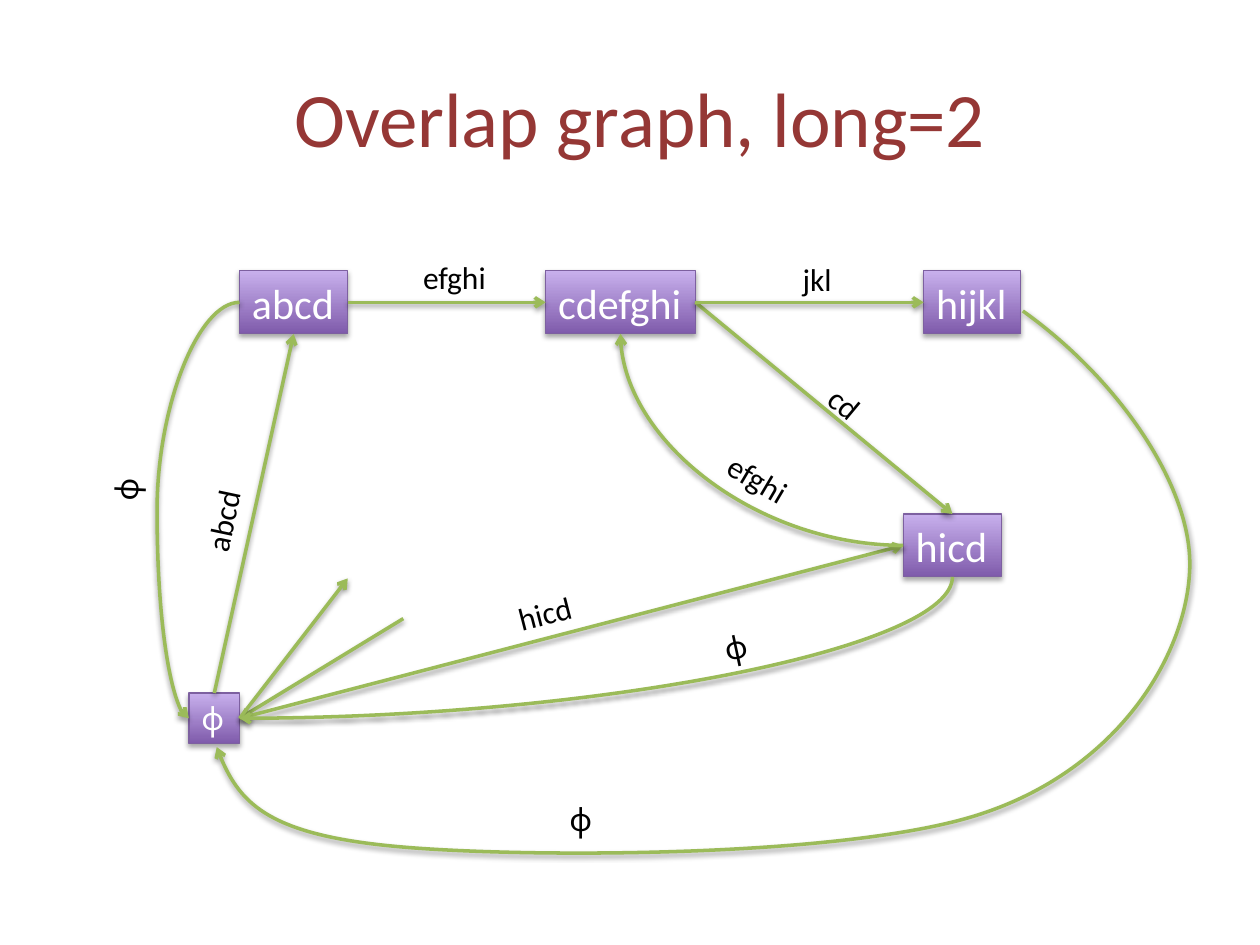
from lxml import etree
from pptx import Presentation
from pptx import util as u
from pptx.dml import color
from pptx.enum import shapes, text
from pptx.oxml import ns

COLOURS = {
    "title": "953735",
    "node_top": "C8B0ED",
    "node_bottom": "7F5BAB",
    "node_line": "7D60A0",
    "node_text": "FFFFFF",
    "edge": "9BBB59",
    "label": "000000",
    "shadow": "000000",
}
TOP, LEFT, BOTTOM, RIGHT = range(4)
PHI = "ϕ"

# name: left, top, width, height in cm within the graph
NODES = {
    "abcd": (2.83, 0.46, 2.18, 1.27),
    "cdefghi": (9, 0.46, 3.02, 1.27),
    "hijkl": (16.62, 0.46, 1.96, 1.27),
    "hicd": (16.21, 5.36, 1.98, 1.27),
    PHI: (1.81, 8.97, 1.02, 1.02),
}
# an end is a node with its side, or a free point in cm
STRAIGHT_EDGES = [
    (("abcd", RIGHT), ("cdefghi", LEFT)),
    (("cdefghi", RIGHT), ("hicd", TOP)),
    (("cdefghi", RIGHT), ("hijkl", LEFT)),
    ((PHI, TOP), ("abcd", BOTTOM)),
    ((6.13, 7.47), (PHI, RIGHT)),
    ((PHI, RIGHT), ("hicd", LEFT)),
    ((PHI, RIGHT), (5.01, 6.66)),
]
CURVED_EDGES = [
    (("hicd", LEFT), ("cdefghi", BOTTOM), {"preset": "curvedConnector2"}),
    (("abcd", LEFT), (PHI, LEFT), {"preset": "curvedConnector3", "bend": 163000}),
    (("hicd", BOTTOM), (PHI, RIGHT), {"preset": "curvedConnector2", "upright": True}),
]
# start point, then three Bezier points for each segment
LOOP = [
    (18.62, 1.27),
    (20.56, 2.65), (22.1, 4.88), (21.98, 6.56),
    (21.88, 8.26), (20.53, 10.47), (17.86, 11.38),
    (15.22, 12.3), (8.62, 12.3), (6.05, 12.07),
    (3.46, 11.84), (2.75, 11.13), (2.37, 10.06),
]
# wording, left, top, width in cm, rotation in degrees
LABELS = [
    ("abcd", 1.61, 4.98, 1.75, 281.9),
    ("efghi", 6.28, 0.08, 1.78, 0),
    ("jkl", 13.93, 0.11, 1.12, 0),
    ("cd", 14.48, 2.62, 1.12, 39.8),
    ("efghi", 12.4, 4.14, 1.78, 30.7),
    (PHI, 9.23, 11, 1.02, 0),
    (PHI, 0.03, 4.32, 1.02, 272.6),
    ("hicd", 8.19, 6.84, 1.6, 345.6),
    (PHI, 12.35, 7.52, 1.02, 347.8),
]


def rgb(name):
    return color.RGBColor.from_string(COLOURS[name])


def add_child(parent, tag, **attributes):
    return etree.SubElement(parent, ns.qn(tag), attributes)


def write(shape, wording, size, colour, font="Calibri", align=text.PP_ALIGN.LEFT, wrap=False):
    frame = shape.text_frame
    frame.word_wrap = wrap
    frame.vertical_anchor = text.MSO_ANCHOR.MIDDLE
    paragraph = frame.paragraphs[0]
    paragraph.alignment = align
    run = paragraph.add_run()
    run.text = wording
    run.font.size = u.Pt(size)
    run.font.name = font
    run.font.color.rgb = rgb(colour)


def font_for(wording):
    return "Open Sans" if wording == PHI else "Calibri"


def add_shadow(shape, opacity, distance):
    properties = shape._element.spPr
    effects = properties.find(ns.qn("a:effectLst"))
    if effects is None:
        effects = add_child(properties, "a:effectLst")
    shadow = add_child(effects, "a:outerShdw", blurRad=str(u.Pt(3.1)), dist=str(u.Pt(distance)),
                       dir="5400000", rotWithShape="0")
    shade = add_child(shadow, "a:srgbClr", val=COLOURS["shadow"])
    add_child(shade, "a:alpha", val=str(opacity * 1000))


def style_edge(shape):
    shape.line.color.rgb = rgb("edge")
    shape.line.width = u.Pt(2)
    add_child(shape.line._get_or_add_ln(), "a:tailEnd", type="arrow")
    add_shadow(shape, 38, 1.6)


def add_title(slide, left, top, width, height):
    box = slide.shapes.add_textbox(left, top, width, height)
    write(box, "Overlap graph, long=2", 44, "title", align=text.PP_ALIGN.CENTER, wrap=True)


def add_node(slide, name, left, top, width, height):
    node = slide.shapes.add_shape(shapes.MSO_SHAPE.RECTANGLE, left, top, width, height)
    node.fill.gradient()
    node.fill.gradient_angle = 90
    for stop, colour in zip(node.fill.gradient_stops, ("node_bottom", "node_top")):
        stop.color.rgb = rgb(colour)
    node.line.color.rgb = rgb("node_line")
    node.line.width = u.Pt(0.75)
    node.shadow.inherit = False
    add_shadow(node, 35, 1.8)
    write(node, name, 18 if name == PHI else 24, "node_text", font_for(name))
    return node


def side_middle(node, side):
    across = {TOP: 0.5, LEFT: 0, BOTTOM: 0.5, RIGHT: 1}[side]
    down = {TOP: 0, LEFT: 0.5, BOTTOM: 1, RIGHT: 0.5}[side]
    return int(node.left + across * node.width), int(node.top + down * node.height)


def add_curve(slide, begin, end, preset, bend=None, upright=False):
    """Draw a curved edge; an upright one leaves its node vertically."""
    if upright:
        middle_x, middle_y = (begin[0] + end[0]) // 2, (begin[1] + end[1]) // 2
        half_x, half_y = (end[1] - begin[1]) // 2, (begin[0] - end[0]) // 2
        begin = middle_x - half_x, middle_y - half_y
        end = middle_x + half_x, middle_y + half_y
    curve = slide.shapes.add_connector(shapes.MSO_CONNECTOR.CURVE, *begin, *end)
    properties = curve._element.spPr
    geometry = properties.find(ns.qn("a:prstGeom"))
    geometry.set("prst", preset)
    if bend:
        add_child(geometry.find(ns.qn("a:avLst")), "a:gd", name="adj1", fmla=f"val {bend}")
    if upright:
        properties.find(ns.qn("a:xfrm")).set("rot", "5400000")
    style_edge(curve)


def add_loop(slide, points):
    """Draw a smooth open outline through the Bezier points."""
    builder = slide.shapes.build_freeform(*points[0])
    builder.add_line_segments(points[1:], close=False)
    loop = builder.convert_to_shape()
    segments = loop._element.xpath(".//a:lnTo")
    for first in range(0, len(segments), 3):
        bezier = etree.Element(ns.qn("a:cubicBezTo"))
        segments[first].addprevious(bezier)
        for segment in segments[first:first + 3]:
            bezier.append(segment[0])
            segment.getparent().remove(segment)
    loop.fill.background()
    loop.shadow.inherit = False
    style_edge(loop)


def add_graph(slide, left, top):
    def place(x, y):
        return left + u.Cm(x), top + u.Cm(y)

    nodes = {name: add_node(slide, name, *place(x, y), u.Cm(width), u.Cm(height))
             for name, (x, y, width, height) in NODES.items()}

    def locate(end):
        return side_middle(nodes[end[0]], end[1]) if end[0] in nodes else place(*end)

    for begin, end in STRAIGHT_EDGES:
        edge = slide.shapes.add_connector(shapes.MSO_CONNECTOR.STRAIGHT, *locate(begin), *locate(end))
        for (name, side), connect in ((begin, edge.begin_connect), (end, edge.end_connect)):
            if name in nodes:
                connect(nodes[name], side)
        style_edge(edge)
    for begin, end, options in CURVED_EDGES:
        add_curve(slide, locate(begin), locate(end), **options)
    add_loop(slide, [place(*point) for point in LOOP])
    for wording, x, y, width, rotation in LABELS:
        label = slide.shapes.add_textbox(*place(x, y), u.Cm(width), u.Cm(1.02))
        label.rotation = rotation
        write(label, wording, 18, "label", font_for(wording))


def main():
    presentation = Presentation()
    presentation.slide_width, presentation.slide_height = u.Cm(25.4), u.Cm(19.05)
    slide = presentation.slides.add_slide(presentation.slide_layouts[6])
    add_title(slide, u.Cm(1.47), u.Cm(0.76), u.Cm(22.86), u.Cm(3.18))
    add_graph(slide, u.Cm(2), u.Cm(5))
    presentation.save("out.pptx")


if __name__ == "__main__":
    main()
